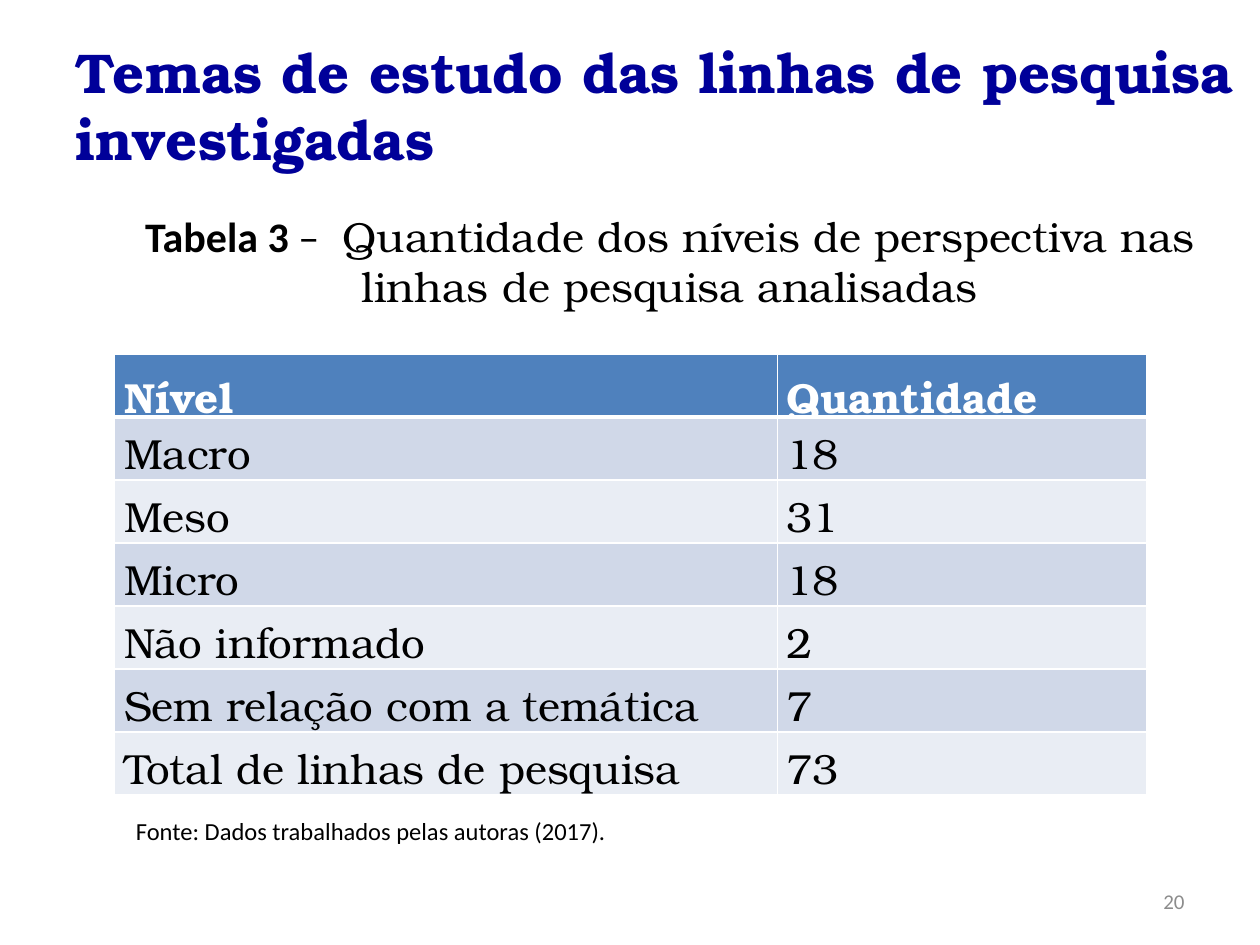
from dataclasses import dataclass

from lxml import etree
from pptx import Presentation
from pptx.dml.color import RGBColor
from pptx.enum import text as t
from pptx.oxml.ns import qn
from pptx.util import Pt

INK = {"title": "000099", "text": "000000", "page": "8C8C8C", "white": "FFFFFF",
       "head": "4F81BD", "odd": "D0D8E8", "even": "E9EDF4"}
SERIF, SANS = "TeX Gyre Bonum", "Calibri"
ROW = 36


@dataclass
class Box:
    left: float
    top: float
    width: float
    height: float

    def pts(self) -> list:
        return [Pt(n) for n in (self.left, self.top, self.width, self.height)]


@dataclass
class Level:
    name: str
    count: str


LEVELS = [
    Level("Nível", "Quantidade"),
    Level("Macro", "18"),
    Level("Meso", "31"),
    Level("Micro", "18"),
    Level("Não informado", "2"),
    Level("Sem relação com a temática", "7"),
    Level("Total de linhas de pesquisa", "73"),
]


def write(par, words: str, *, size=24, font=SERIF, ink="text", bold=False) -> None:
    run = par.add_run()
    run.text = words
    run.font.size = Pt(size)
    run.font.name = font
    run.font.bold = bold
    run.font.color.rgb = RGBColor.from_string(INK[ink])


def add_box(slide, box: Box, align=t.PP_ALIGN.LEFT, anchor=t.MSO_ANCHOR.TOP):
    """Add a wrapping text box and return its first paragraph."""
    frame = slide.shapes.add_textbox(*box.pts()).text_frame
    frame.word_wrap = True
    frame.vertical_anchor = anchor
    par = frame.paragraphs[0]
    par.alignment = align
    return par


def set_edges(cell, **widths: float) -> None:
    """Draw white borders; they must precede the fill in the cell properties."""
    props = cell._tc.get_or_add_tcPr()
    for spot, (side, width) in enumerate(widths.items()):
        line = etree.Element(qn(f"a:ln{side}"), w=str(Pt(width)))
        fill = etree.SubElement(line, qn("a:solidFill"))
        etree.SubElement(fill, qn("a:srgbClr"), val=INK["white"])
        props.insert(spot, line)


def add_levels(slide, box: Box, widths: list[float]) -> None:
    table = slide.shapes.add_table(len(LEVELS), len(widths), *box.pts()).table
    for col, width in zip(table.columns, widths):
        col.width = Pt(width)
    for r, level in enumerate(LEVELS):
        head = r == 0
        table.rows[r].height = Pt(ROW)
        shade = "head" if head else "odd" if r % 2 else "even"
        for c, words in enumerate((level.name, level.count)):
            cell = table.cell(r, c)
            cell.margin_left = cell.margin_right = Pt(5.4)
            cell.margin_top = Pt(6.3 if head else 4.3)
            cell.margin_bottom = Pt(0)
            cell.fill.solid()
            cell.fill.fore_color.rgb = RGBColor.from_string(INK[shade])
            set_edges(cell, L=1, R=1, T=3 if r == 1 else 1, B=3 if head else 1)
            write(cell.text_frame.paragraphs[0], words, bold=head,
                  ink="white" if head else "text")


def main() -> None:
    deck = Presentation()
    deck.slide_width, deck.slide_height = Pt(720), Pt(540)
    slide = deck.slides.add_slide(deck.slide_layouts[6])

    title = add_box(slide, Box(0, 18, 720, 85))
    title._p.get_or_add_pPr().set("marL", str(Pt(36)))
    write(title, "Temas de estudo das linhas de pesquisa investigadas",
          size=32, ink="title", bold=True)

    page = add_box(slide, Box(516, 500.5, 168, 28.75),
                   t.PP_ALIGN.RIGHT, t.MSO_ANCHOR.MIDDLE)
    write(page, "20", size=12, font=SANS, ink="page")

    add_levels(slide, Box(65.5, 202.3, 589.7, ROW * len(LEVELS)), [378.7, 211])

    label = add_box(slide, Box(45.4, 116.6, 674.6, 65.5), t.PP_ALIGN.CENTER)
    write(label, "Tabela 3 ", font=SANS, bold=True)
    write(label, "– ", font=SANS)
    write(label, " Quantidade dos níveis de perspectiva nas linhas de pesquisa analisadas")

    source = add_box(slide, Box(70.6, 463, 700, 24.5))
    write(source, "Fonte: Dados trabalhados pelas autoras (2017).", size=14, font=SANS)

    deck.save("out.pptx")


if __name__ == "__main__":
    main()
